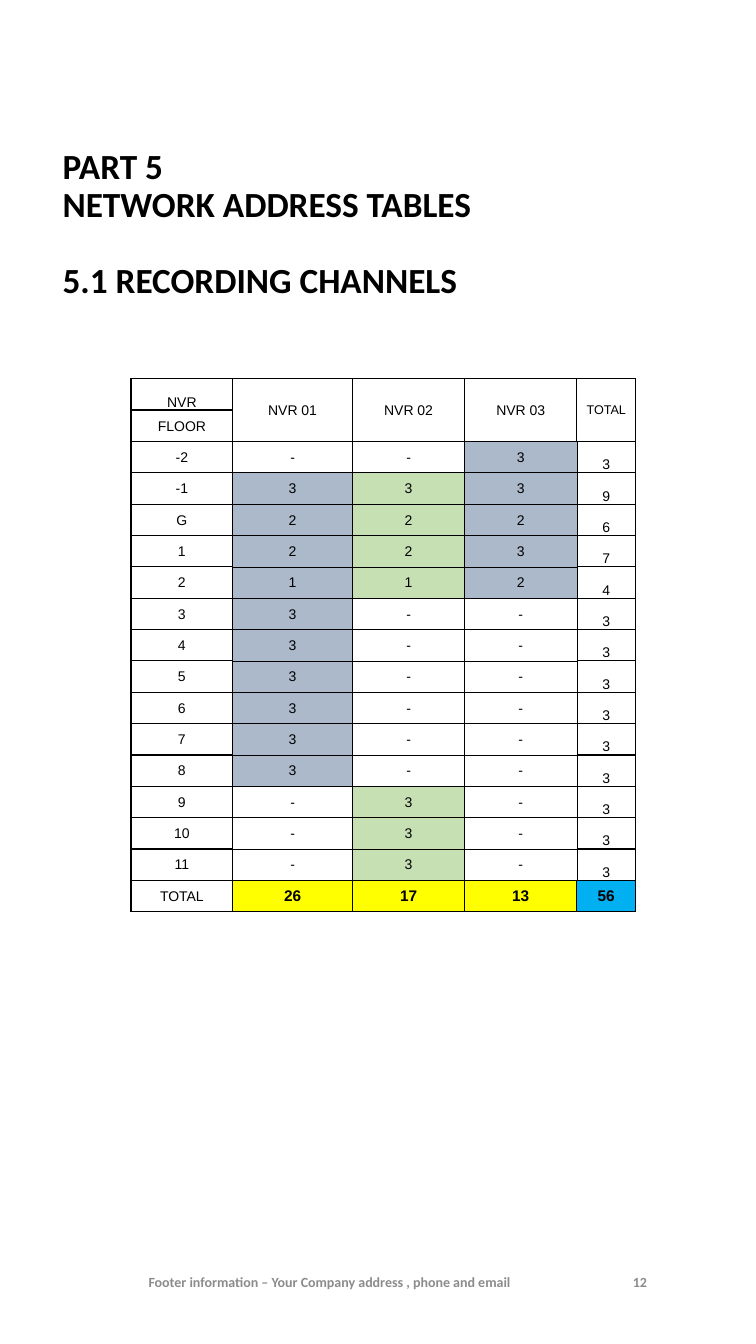
from dataclasses import dataclass

from lxml import etree
from pptx import Presentation
from pptx.dml.color import RGBColor
from pptx.enum.text import MSO_ANCHOR, MSO_AUTO_SIZE, PP_ALIGN
from pptx.oxml.ns import qn
from pptx.util import Pt

LEFT, CENTER = PP_ALIGN.LEFT, PP_ALIGN.CENTER
MIDDLE, BOTTOM = MSO_ANCHOR.MIDDLE, MSO_ANCHOR.BOTTOM
NO_AUTOFIT = MSO_AUTO_SIZE.NONE
TITLE_ONLY = 5


@dataclass(frozen=True)
class Theme:
    text_font: str = "Calibri"
    table_font: str = "Arial"
    black: str = "000000"
    white: str = "FFFFFF"
    footer: str = "8C8C8C"
    blue: str = "ACB9CA"
    green: str = "C6E0B4"
    yellow: str = "FFFF00"
    cyan: str = "00B0F0"
    title_size: float = 25.2
    body_size: float = 10
    small_size: float = 9
    total_size: float = 11
    thin: float = 0.5
    thick: float = 1


THEME = Theme()
RECORDERS = ["NVR 01", "NVR 02", "NVR 03"]
RECORDER_COLORS = [THEME.blue, THEME.green, THEME.blue]
CHANNELS = {
    "-2": (0, 0, 3),
    "-1": (3, 3, 3),
    "G": (2, 2, 2),
    "1": (2, 2, 3),
    "2": (1, 1, 2),
    **{str(floor): (3, 0, 0) for floor in range(3, 9)},
    **{str(floor): (0, 3, 0) for floor in range(9, 12)},
}
COLUMN_WIDTHS = [72.5, 85.5, 80, 80, 42]


def add_run(paragraph, text, font, size, color, bold=False):
    run = paragraph.add_run()
    run.text = text
    run.font.name = font
    run.font.size = Pt(size)
    run.font.bold = bold
    run.font.color.rgb = RGBColor.from_string(color)


def place_title(slide, left, top, width, height):
    title = slide.shapes.title
    title.left, title.top = Pt(left), Pt(top)
    title.width, title.height = Pt(width), Pt(height)
    frame = title.text_frame
    frame.auto_size = NO_AUTOFIT
    frame.word_wrap = True
    frame.vertical_anchor = MIDDLE
    lines = [("PART 5", 0), ("NETWORK ADDRESS TABLES", 0),
             ("5.1 RECORDING CHANNELS", 27.5)]
    for index, (text, gap) in enumerate(lines):
        paragraph = frame.add_paragraph() if index else frame.paragraphs[0]
        paragraph.alignment = LEFT
        paragraph.line_spacing = 0.9
        paragraph.space_before = Pt(gap)
        add_run(paragraph, text, THEME.text_font, THEME.title_size, THEME.black, True)


def add_footer_text(slide, text, alignment, left, top, width, height):
    frame = slide.shapes.add_textbox(
        Pt(left), Pt(top), Pt(width), Pt(height)).text_frame
    frame.word_wrap = True
    frame.vertical_anchor = MIDDLE
    paragraph = frame.paragraphs[0]
    paragraph.alignment = alignment
    add_run(paragraph, text, THEME.text_font, THEME.body_size, THEME.footer, True)


def set_borders(cell, widths):
    properties = cell._tc.get_or_add_tcPr()
    for side, width in zip("LRTB", widths):
        line = etree.SubElement(properties, qn(f"a:ln{side}"), w=str(Pt(width)))
        fill = etree.SubElement(line, qn("a:solidFill"))
        etree.SubElement(fill, qn("a:srgbClr"), val=THEME.black)


def border_widths(row, column, total_row, total_column):
    thin, thick = THEME.thin, THEME.thick
    if row < 2 or column == 0:
        return thick, thick, thick, thick
    if row == total_row:
        return thick, thick, thick if column == total_column else thin, thick
    if column == total_column:
        return thin, thick, thick, thick
    return (thick if column == 1 else thin, thin,
            thick if row == 2 else thin, thin)


def cell_fill(row, column, text, total_row, total_column):
    if row < 2 or column == 0:
        return THEME.white
    if row == total_row:
        return THEME.cyan if column == total_column else THEME.yellow
    if column == total_column or text == "-":
        return THEME.white
    return RECORDER_COLORS[column - 1]


def channel_rows():
    rows = [["NVR", *RECORDERS, "TOTAL"], ["FLOOR"] + [""] * 4]
    for floor, counts in CHANNELS.items():
        rows.append([floor, *(str(count or "-") for count in counts), str(sum(counts))])
    totals = [sum(counts) for counts in zip(*CHANNELS.values())]
    rows.append(["TOTAL", *map(str, totals), str(sum(totals))])
    return rows


def add_channel_table(slide, left, top, width, height):
    rows = channel_rows()
    total_row, total_column = len(rows) - 1, len(COLUMN_WIDTHS) - 1
    table = slide.shapes.add_table(
        len(rows), len(COLUMN_WIDTHS), Pt(left), Pt(top), Pt(width), Pt(height)).table
    table.first_row = table.horz_banding = False
    scale = width / sum(COLUMN_WIDTHS)
    for column, column_width in zip(table.columns, COLUMN_WIDTHS):
        column.width = Pt(column_width * scale)
    for table_row in table.rows:
        table_row.height = Pt(height / len(rows))

    for row, texts in enumerate(rows):
        for column, text in enumerate(texts):
            cell = table.cell(row, column)
            cell.margin_left = cell.margin_right = cell.margin_top = Pt(0.7)
            cell.margin_bottom = 0
            floor_total = column == total_column and 2 <= row < total_row
            at_bottom = floor_total or (row, column) == (0, 0)
            cell.vertical_anchor = BOTTOM if at_bottom else MIDDLE
            set_borders(cell, border_widths(row, column, total_row, total_column))
            cell.fill.solid()
            cell.fill.fore_color.rgb = RGBColor.from_string(
                cell_fill(row, column, text, total_row, total_column))
            if not text:
                continue
            bold = row == total_row and column > 0
            size = THEME.total_size if bold else THEME.body_size
            if (row, column) == (0, total_column):
                size = THEME.small_size
            paragraph = cell.text_frame.paragraphs[0]
            paragraph.alignment = CENTER
            add_run(paragraph, text, THEME.table_font, size, THEME.black, bold)

    for column in range(1, total_column + 1):
        table.cell(0, column).merge(table.cell(1, column))


def main():
    presentation = Presentation()
    presentation.slide_width, presentation.slide_height = Pt(540), Pt(960)
    slide = presentation.slides.add_slide(presentation.slide_layouts[TITLE_ONLY])
    place_title(slide, 37.5, 108.5, 466, 104.5)
    add_footer_text(slide, "Footer information – Your Company address , phone and email",
                    CENTER, 35.5, 890, 399.5, 51)
    add_channel_table(slide, 93.6, 270.5, 360.5, 380.8)
    add_footer_text(slide, "12", LEFT, 445, 890, 58.5, 51)
    presentation.save("out.pptx")


if __name__ == "__main__":
    main()
